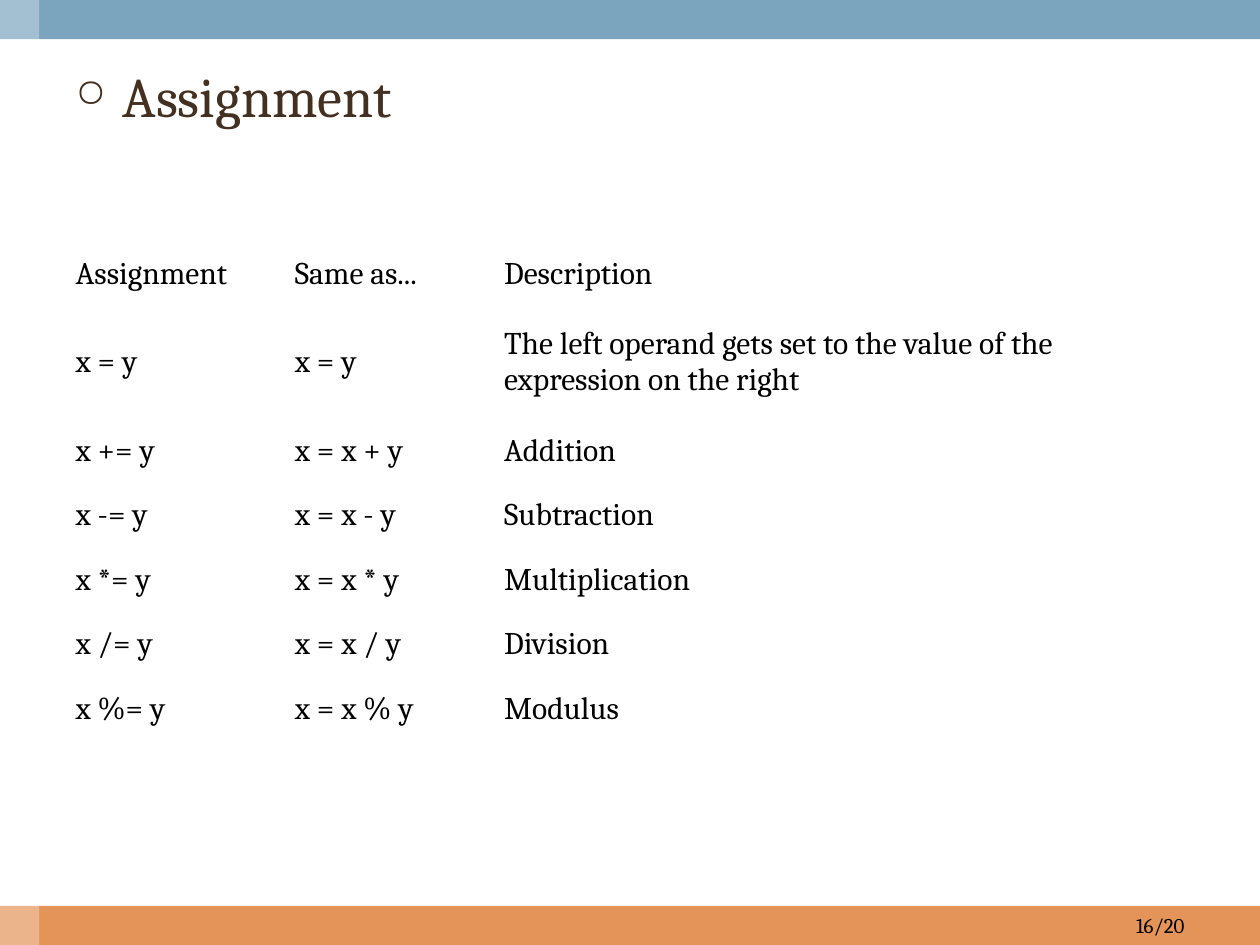
from lxml import etree
from pptx import Presentation
from pptx import util as u
from pptx.dml.color import RGBColor
from pptx.enum import shapes, text
from pptx.oxml import ns

FONT = "Cambria"
COLORS = {
    "top": "7BA5BE",
    "bottom": "E49458",
    "strip": "FFFFFF",
    "heading": "433021",
    "body": "000000",
}
WIDTH, HEIGHT, BAR = u.Cm(25.4), u.Cm(19.05), u.Cm(0.79)
MARGIN = u.Cm(1.27)
COLUMN_WIDTHS = [4.42, 4.22, 13.58]
ROW_HEIGHT, TALL_ROW_HEIGHT = u.Cm(1.3), u.Cm(2.26)
ROWS = [
    ("Assignment", "Same as...", "Description"),
    ("x = y", "x = y", "The left operand gets set to the value of the expression on the right"),
    ("x += y", "x = x + y", "Addition"),
    ("x -= y", "x = x - y", "Subtraction"),
    ("x *= y", "x = x * y", "Multiplication"),
    ("x /= y", "x = x / y", "Division"),
    ("x %= y", "x = x % y", "Modulus"),
]


def add_bar(slide, left, top, width, height, color, opacity=100):
    bar = slide.shapes.add_shape(shapes.MSO_SHAPE.RECTANGLE, left, top, width, height)
    bar.shadow.inherit = False
    bar.fill.solid()
    bar.fill.fore_color.rgb = RGBColor.from_string(COLORS[color])
    bar.line.fill.background()
    if opacity < 100:
        color_element = bar._element.spPr.find(".//" + ns.qn("a:srgbClr"))
        etree.SubElement(color_element, ns.qn("a:alpha"), val=str(opacity * 1000))


def write_text(frame, content, size=18, color="body", align=text.PP_ALIGN.LEFT):
    frame.word_wrap = True
    paragraph = frame.paragraphs[0]
    paragraph.alignment = align
    run = paragraph.add_run()
    run.text = content
    run.font.name = FONT
    run.font.size = u.Pt(size)
    run.font.color.rgb = RGBColor.from_string(COLORS[color])
    return paragraph


def add_bullet(paragraph, character, percent, indent):
    """Give the paragraph a bullet with a hanging indent."""
    properties = paragraph._p.get_or_add_pPr()
    properties.set("marL", str(indent))
    properties.set("indent", str(-indent))
    etree.SubElement(properties, ns.qn("a:buSzPct"), val=str(percent * 1000))
    etree.SubElement(properties, ns.qn("a:buChar"), char=character)


def add_heading(slide, content):
    box = slide.shapes.add_textbox(MARGIN, u.Cm(1.12), WIDTH - 2 * MARGIN, u.Cm(15.9))
    paragraph = write_text(box.text_frame, content, size=32, color="heading")
    paragraph.space_before = u.Pt(6.4)
    add_bullet(paragraph, "○", 70, u.Cm(0.95))


def add_page_number(slide, content):
    width = u.Cm(5.92)
    box = slide.shapes.add_textbox(WIDTH - MARGIN - width, HEIGHT - BAR, width, BAR)
    box.text_frame.vertical_anchor = text.MSO_ANCHOR.MIDDLE
    write_text(box.text_frame, content, size=12, align=text.PP_ALIGN.RIGHT)


def add_operator_table(slide):
    height = ROW_HEIGHT * (len(ROWS) - 1) + TALL_ROW_HEIGHT
    table = slide.shapes.add_table(
        len(ROWS), len(COLUMN_WIDTHS), MARGIN, u.Cm(4.88), u.Cm(sum(COLUMN_WIDTHS)), height
    ).table
    table.first_row = table.horz_banding = False
    for column, width in zip(table.columns, COLUMN_WIDTHS):
        column.width = u.Cm(width)
    for index, (row, values) in enumerate(zip(table.rows, ROWS)):
        row.height = TALL_ROW_HEIGHT if index == 1 else ROW_HEIGHT
        for cell, value in zip(row.cells, values):
            cell.fill.background()
            cell.vertical_anchor = text.MSO_ANCHOR.MIDDLE
            write_text(cell.text_frame, value)


def main():
    presentation = Presentation()
    presentation.slide_width, presentation.slide_height = WIDTH, HEIGHT
    slide = presentation.slides.add_slide(presentation.slide_layouts[6])
    add_bar(slide, 0, HEIGHT - BAR, WIDTH, BAR, "bottom")
    add_bar(slide, 0, 0, WIDTH, BAR, "top")
    add_bar(slide, 0, 0, BAR, HEIGHT, "strip", opacity=30)
    add_heading(slide, "Assignment")
    add_page_number(slide, "16/20")
    add_operator_table(slide)
    presentation.save("out.pptx")


if __name__ == "__main__":
    main()
